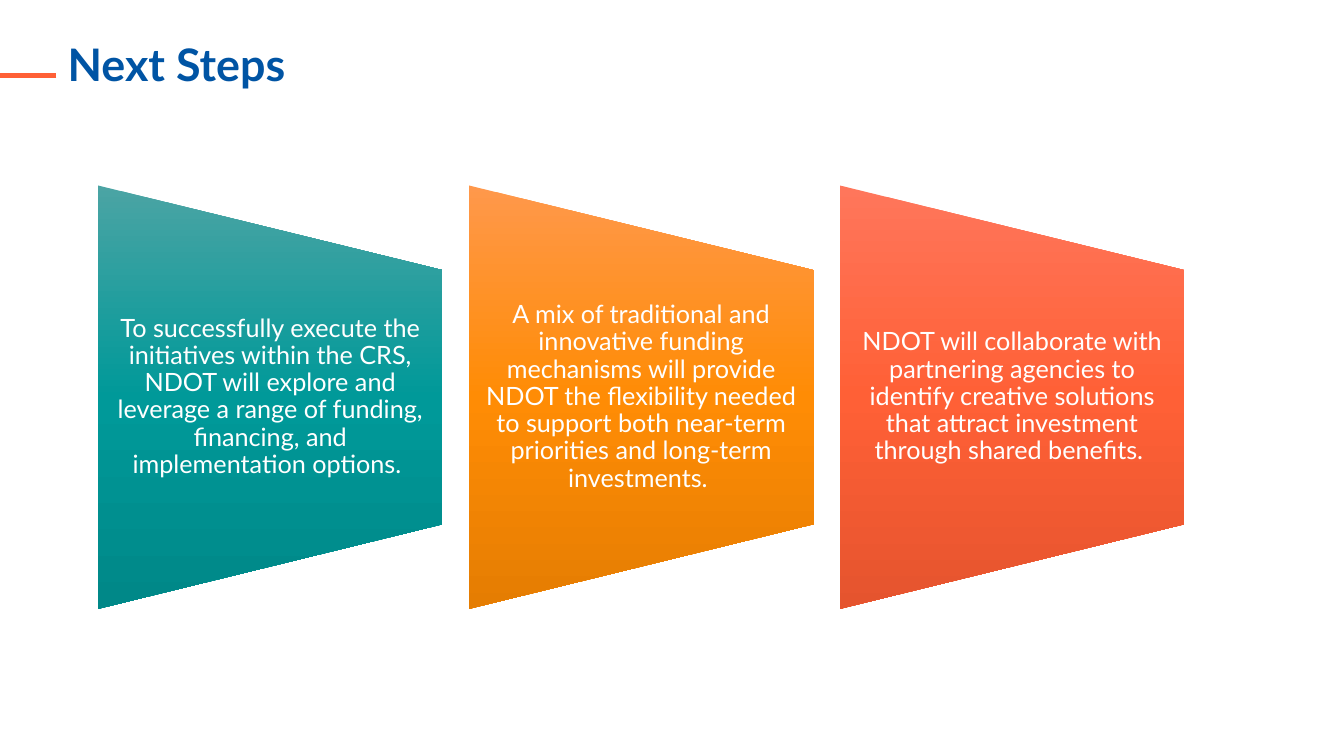
from copy import deepcopy
from dataclasses import dataclass

from lxml.etree import SubElement
from pptx import Presentation
from pptx.dml.color import RGBColor
from pptx.enum.shapes import MSO_CONNECTOR, MSO_SHAPE
from pptx.enum.text import MSO_ANCHOR, PP_ALIGN
from pptx.oxml.ns import qn
from pptx.slide import Slide
from pptx.util import Inches, Pt

SLIDE_WIDTH, SLIDE_HEIGHT = Inches(13.33), Inches(7.5)
FONT = "Lato"
WHITE = RGBColor(0xFF, 0xFF, 0xFF)
TITLE_BLUE = RGBColor(0x00, 0x54, 0xA4)
RULE_ORANGE = RGBColor(0xFF, 0x60, 0x36)
TEAL = (RGBColor(0x4B, 0xA4, 0xA4), RGBColor(0x00, 0x99, 0x99), RGBColor(0x00, 0x88, 0x88))
AMBER = (RGBColor(0xFF, 0x98, 0x4B), RGBColor(0xFF, 0x8C, 0x05), RGBColor(0xE5, 0x7D, 0x02))
CORAL = (RGBColor(0xFF, 0x76, 0x5B), RGBColor(0xFF, 0x60, 0x36), RGBColor(0xE5, 0x54, 0x2E))

# Card grid, in percent of the slide's width and height
FIRST_LEFT, CARD_STEP, CARD_WIDTH = 7.28, 27.6, 25.65
CARD_TOP, CARD_HEIGHT = 24.53, 56
TEXT_SHARE = 0.6


@dataclass(frozen=True)
class Box:
    left: int
    top: int
    width: int
    height: int


@dataclass(frozen=True)
class Step:
    text: str
    gradient: tuple[RGBColor, RGBColor, RGBColor]


STEPS = (
    Step("To successfully execute the initiatives within the CRS, NDOT will explore and "
         "leverage a range of funding, financing, and implementation options. ", TEAL),
    Step("A mix of traditional and innovative funding mechanisms will provide NDOT the "
         "flexibility needed to support both near-term priorities and "
         "long-term investments. ", AMBER),
    Step("NDOT will collaborate with partnering agencies to identify creative solutions "
         "that attract investment through shared benefits. ", CORAL),
)


def across(percent: float) -> int:
    return round(SLIDE_WIDTH * percent / 100)


def down(percent: float) -> int:
    return round(SLIDE_HEIGHT * percent / 100)


def add_text(slide: Slide, box: Box, text: str, size: int, color: RGBColor,
             bold: bool = False, centred: bool = False) -> None:
    frame = slide.shapes.add_textbox(box.left, box.top, box.width, box.height).text_frame
    frame.word_wrap = True
    frame.margin_top = frame.margin_bottom = 0
    frame.margin_left = frame.margin_right = Inches(0.12) if centred else 0
    frame.vertical_anchor = MSO_ANCHOR.MIDDLE if centred else MSO_ANCHOR.TOP
    paragraph = frame.paragraphs[0]
    paragraph.text = text
    paragraph.alignment = PP_ALIGN.CENTER if centred else PP_ALIGN.LEFT
    paragraph.line_spacing = 0.9
    font = paragraph.font
    font.name, font.size, font.bold = FONT, Pt(size), bold
    font.color.rgb = color


def add_title(slide: Slide) -> None:
    rule = slide.shapes.add_connector(
        MSO_CONNECTOR.STRAIGHT, across(4.2), down(10), 0, down(10))
    rule.line.color.rgb = RULE_ORANGE
    rule.line.width = Pt(3.5)
    SubElement(rule._element.spPr, qn("a:effectLst"))
    box = Box(across(5.03), down(5.6), across(90), down(12.27))
    add_text(slide, box, "Next Steps", 32, TITLE_BLUE, bold=True)


def add_card(slide: Slide, index: int, step: Step) -> None:
    """Draw a trapezoid turned on its side, with its text upright on top."""
    left, top = across(FIRST_LEFT + index * CARD_STEP), down(CARD_TOP)
    width, height = across(CARD_WIDTH), down(CARD_HEIGHT)
    inset = (height - width) // 2
    card = slide.shapes.add_shape(
        MSO_SHAPE.FLOWCHART_MANUAL_OPERATION, left - inset, top + inset, height, width)
    card.rotation = 270
    card.shadow.inherit = False
    card.line.fill.background()

    card.fill.gradient()
    card.fill.gradient_angle = 270
    gradient = card._element.spPr.find(qn("a:gradFill"))
    gradient.set("rotWithShape", "0")
    stops = gradient.find(qn("a:gsLst"))
    stops.insert(1, deepcopy(stops[0]))
    for number, (stop, color) in enumerate(zip(card.fill.gradient_stops, step.gradient)):
        stop.position = number / 2
        stop.color.rgb = color

    text_height = round(height * TEXT_SHARE)
    box = Box(left, top + (height - text_height) // 2, width, text_height)
    add_text(slide, box, step.text, 18, WHITE, centred=True)


def main() -> None:
    presentation = Presentation()
    presentation.slide_width, presentation.slide_height = SLIDE_WIDTH, SLIDE_HEIGHT
    slide = presentation.slides.add_slide(presentation.slide_layouts[6])
    add_title(slide)
    for index, step in enumerate(STEPS):
        add_card(slide, index, step)
    presentation.save("out.pptx")


if __name__ == "__main__":
    main()
